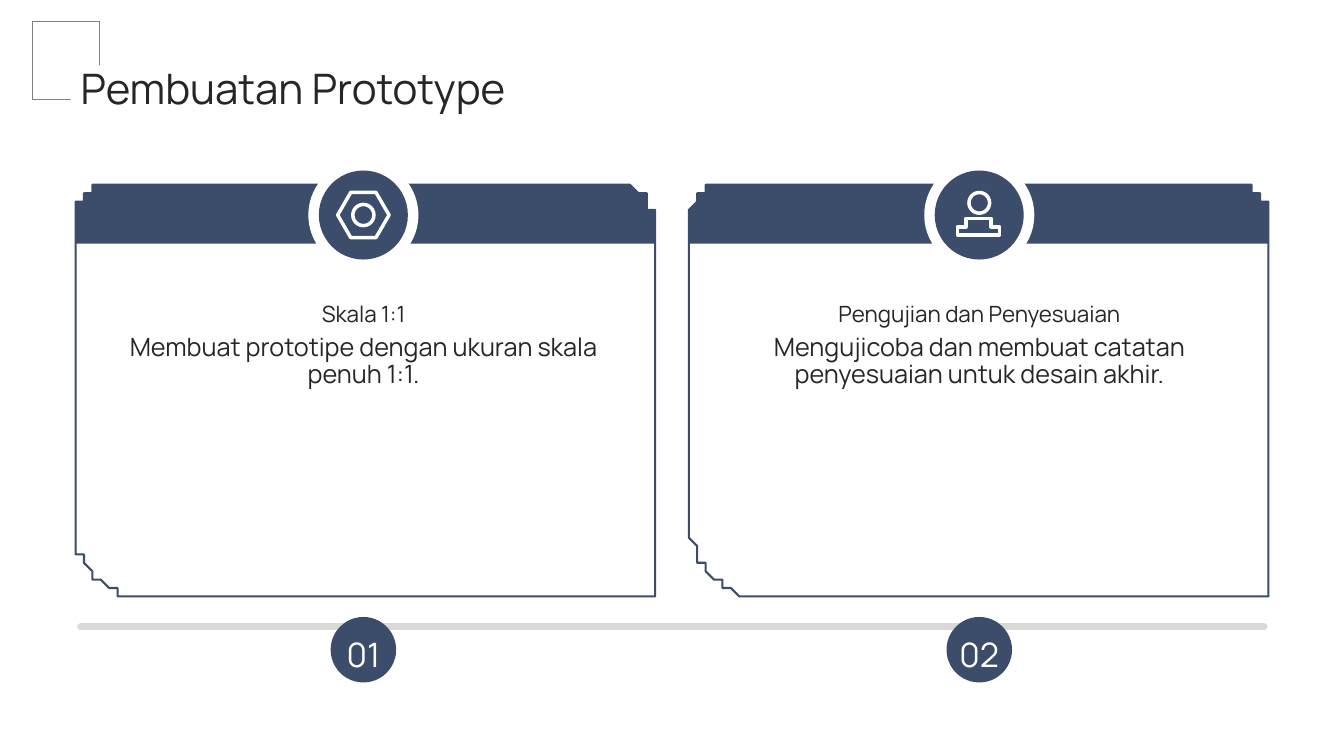
"""Builds the two-card prototype slide on a grid of 160 by 90 square cells."""
from math import cos, pi, sin

from pptx import Presentation, util as u
from pptx.dml.color import RGBColor
from pptx.enum import shapes, text
from pptx.oxml import parse_xml
from pptx.oxml.ns import nsdecls

CELL = u.Inches(7.5) / 90
COLORS = {"navy": "3C4C6B", "white": "FFFFFF", "ink": "262626",
          "rail": "D9D9D9", "frame": "808080"}
FONT = "Manrope"
CARD_LEFT, CARD_TOP, CARD_W, CARD_H, PITCH = 8.76, 21.84, 69, 49.56, 73.32
HEADER_H, BADGE_Y, NUMBER_Y, RAIL_Y = 7.4, 25.6, 77.35, 74.64


def g(n):
    """Turn grid cells into a length."""
    return u.Emu(round(n * CELL))


def rgb(name):
    """Look up a colour by name."""
    return RGBColor.from_string(COLORS[name])


def paint(sp, fill=None, line=None, width=1.5):
    """Set fill and line, and drop the shadow."""
    sp.shadow.inherit = False
    if fill:
        sp.fill.solid()
        sp.fill.fore_color.rgb = rgb(fill)
    else:
        sp.fill.background()
    if line:
        sp.line.color.rgb = rgb(line)
        sp.line.width = u.Pt(width)
    else:
        sp.line.fill.background()
    return sp


def preset(s, kind, box, **style):
    """Add a preset shape."""
    return paint(s.shapes.add_shape(kind, *map(g, box)), **style)


def disc(s, cx, cy, d, **style):
    """Add a circle around a centre."""
    return preset(s, shapes.MSO_SHAPE.OVAL, (cx - d / 2, cy - d / 2, d, d), **style)


def rounded(s, box, radii, **style):
    """Add a box with its own (rx, ry) at each corner, clockwise from top left."""
    x, y, w, h = box
    corners = [(x, y, 1, 1), (x + w, y, -1, 1), (x + w, y + h, -1, -1), (x, y + h, 1, -1)]
    points = []
    for i, ((px, py, dx, dy), (rx, ry)) in enumerate(zip(corners, radii)):
        steps = 24 if rx else 0
        for k in range(steps + 1):
            a = pi + (i + k / max(steps, 1)) * pi / 2
            points.append((px + rx * (dx + cos(a)), py + ry * (dy + sin(a))))
    fb = s.shapes.build_freeform(*points[0], scale=CELL)
    fb.add_line_segments(points[1:], close=True)
    return paint(fb.convert_to_shape(), **style)


def write(sp, words, size, color="ink", align=text.PP_ALIGN.CENTER,
          anchor=text.MSO_ANCHOR.TOP, spacing=1.0):
    """Put one paragraph into a shape without margins."""
    tf = sp.text_frame
    tf.word_wrap = True
    tf.margin_left = tf.margin_right = tf.margin_top = tf.margin_bottom = 0
    tf.vertical_anchor = anchor
    p = tf.paragraphs[0]
    p.text, p.alignment, p.line_spacing = words, align, spacing
    p.font.name, p.font.size, p.font.color.rgb = FONT, u.Pt(size), rgb(color)
    return tf


def label(s, box, words, size, **style):
    """Add a text box."""
    return write(s.shapes.add_textbox(*map(g, box)), words, size, **style)


def nut_icon(s, cx, cy):
    """Draw a hexagonal nut."""
    w, h = 6.12, 5.4
    sp = preset(s, shapes.MSO_SHAPE.HEXAGON, (cx - w / 2, cy - h / 2, w, h),
                line="white", width=2.5)
    sp.adjustments[0] = 0.29
    disc(s, cx, cy, 2.52, line="white", width=2.5)


def person_icon(s, cx, cy):
    """Draw a head and shoulders."""
    w, h = 4.86, 2.22
    disc(s, cx, cy - 1.45, 2.46, line="white", width=2.5)
    rounded(s, (cx - w / 2, cy + 0.44, w, h),
            [(w / 2, 1.6)] * 2 + [(0.7, 0.6)] * 2, line="white", width=2.5)


def rail(s):
    """Draw the round-ended line beneath the cards."""
    cn = s.shapes.add_connector(shapes.MSO_CONNECTOR.STRAIGHT,
                                g(9.6), g(RAIL_Y), g(150.48), g(RAIL_Y))
    cn.line.color.rgb = rgb("rail")
    cn.line.width = u.Pt(5)
    cn.line._get_or_add_ln().set("cap", "rnd")
    cn._element.spPr.append(parse_xml(f"<a:effectLst {nsdecls('a')}/>"))


def card(s, i, heading, body, icon):
    """Draw one card with its badge, texts and number."""
    x = CARD_LEFT + i * PITCH
    cx = x + CARD_W / 2
    top, square = [(4.6, 4.6)] * 2, (0, 0)
    rounded(s, (x, CARD_TOP, CARD_W, CARD_H), top + [square, (9.24, 9.4)],
            fill="white", line="navy")
    rounded(s, (x, CARD_TOP, CARD_W, HEADER_H), top + [square] * 2, fill="navy")
    disc(s, cx, BADGE_Y, 13.1, fill="white")
    disc(s, cx, BADGE_Y, 10.6, fill="navy")
    icon(s, cx, BADGE_Y)
    label(s, (x + 4.4, 31.08, 60.24, 7.92), heading, 16,
          anchor=text.MSO_ANCHOR.BOTTOM, spacing=0.9)
    label(s, (x + 4.4, 39.84, 60.24, 29.04), body, 18, spacing=0.9)
    number = disc(s, cx, NUMBER_Y, 7.8, fill="navy")
    tf = write(number, f"{i + 1:02}", 24, color="white", anchor=text.MSO_ANCHOR.MIDDLE)
    tf.word_wrap = False
    tf.margin_top = g(1)


def title(s, words):
    """Draw the title over its corner frame."""
    preset(s, shapes.MSO_SHAPE.RECTANGLE, (3.84, 2.52, 8.04, 9.36), line="frame", width=0.75)
    preset(s, shapes.MSO_SHAPE.RECTANGLE, (8.4, 7.8, 7.32, 6), fill="white")
    label(s, (9.6, 8.16, 133.2, 5.52), words, 30, align=text.PP_ALIGN.LEFT, spacing=0.9)


def main():
    """Build and save the slide."""
    prs = Presentation()
    prs.slide_width, prs.slide_height = g(160), g(90)
    s = prs.slides.add_slide(prs.slide_layouts[6])
    rail(s)
    cards = [
        ("Skala 1:1", "Membuat prototipe dengan ukuran skala penuh 1:1.", nut_icon),
        ("Pengujian dan Penyesuaian",
         "Mengujicoba dan membuat catatan penyesuaian untuk desain akhir.", person_icon),
    ]
    for i, (heading, body, icon) in enumerate(cards):
        card(s, i, heading, body, icon)
    title(s, "Pembuatan Prototype")
    prs.save("out.pptx")


if __name__ == "__main__":
    main()
